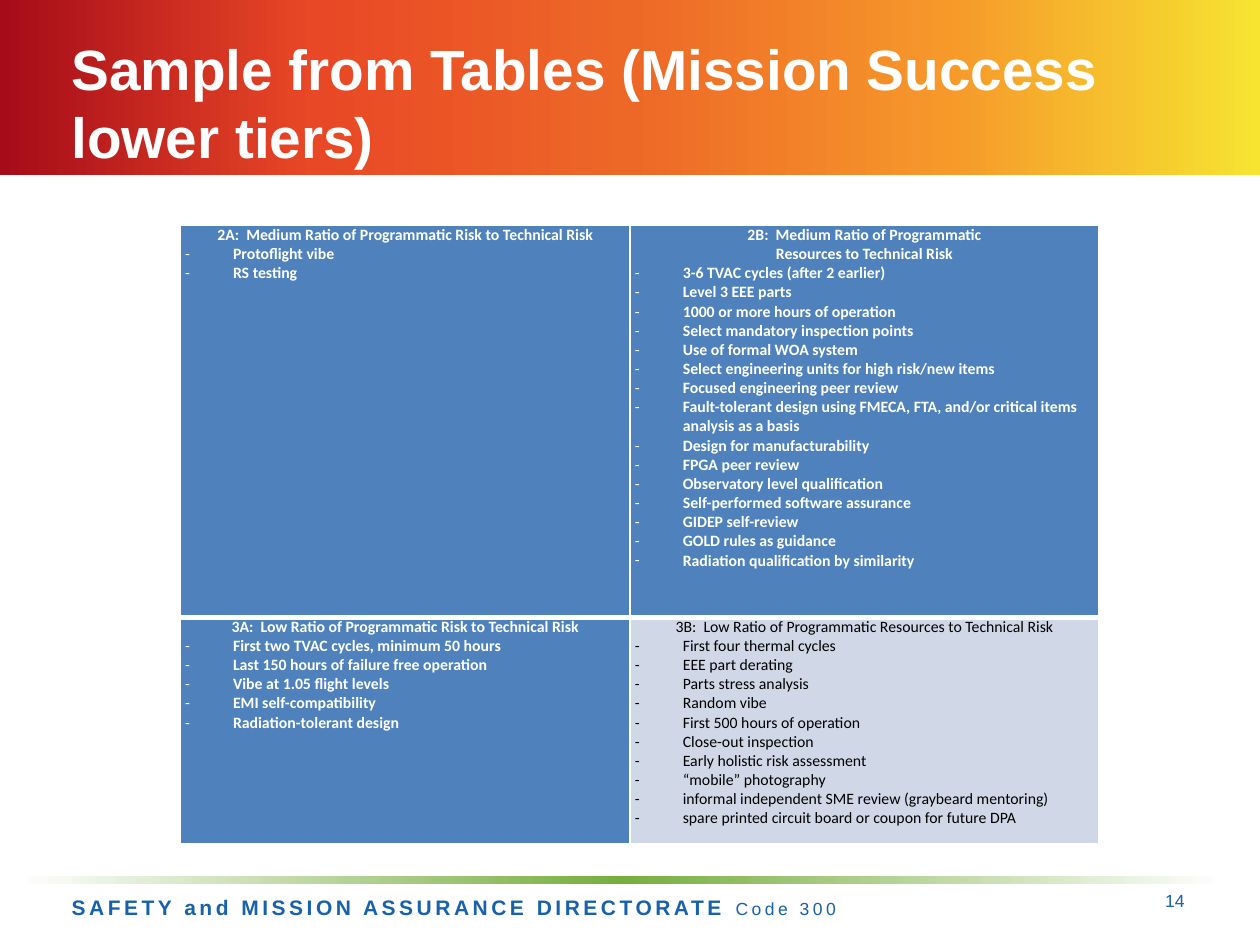
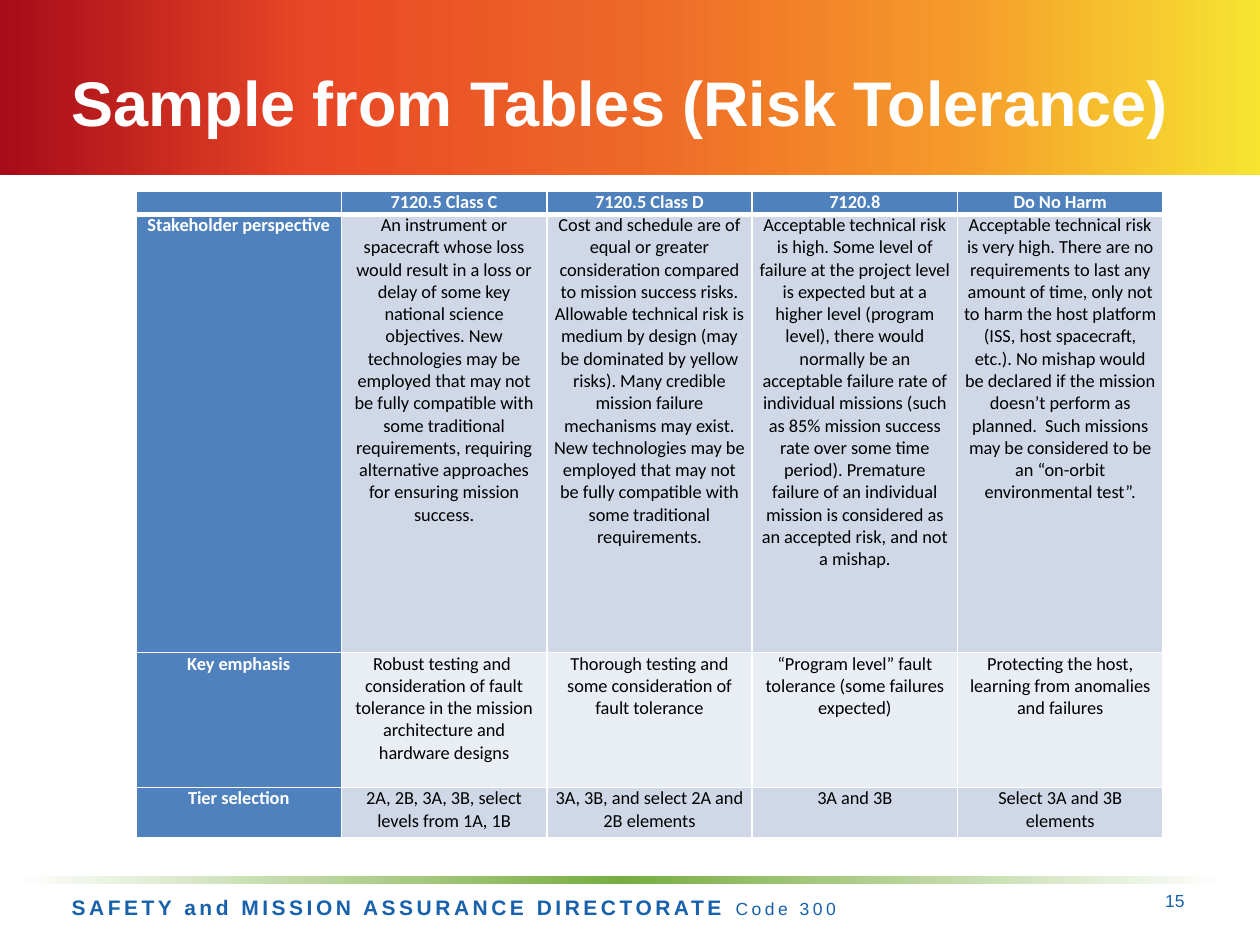
"""Builds two slides of sample risk tables for a safety and mission assurance briefing."""
from lxml.etree import SubElement
from pptx import Presentation
from pptx.dml.color import RGBColor
from pptx.enum.shapes import MSO_SHAPE as Shape
from pptx.enum.text import MSO_ANCHOR as Anchor, PP_ALIGN as Align
from pptx.oxml.ns import qn
from pptx.util import Inches, Pt

WHITE, BLACK, NAVY = "FFFFFF", "000000", "1861AC"
HEADER, BAND_DARK, BAND_LIGHT = "4F81BD", "D0D8E8", "E9EDF4"
BANNER = [(0, "A60B19"), (25, "E94826"), (50, "ED6827"), (75, "F6982A"), (100, "F6E431")]
RULE = [(0, WHITE), (50, "77AD3F"), (100, WHITE)]
DIRECTORATE, CODE = "SAFETY and MISSION ASSURANCE DIRECTORATE ", "Code 300"

TIERS = {
    "title": "Sample from Tables (Mission Success lower tiers)",
    "title_size": 32.4,
    "number": 14,
    "at": (1.43, 1.79),
    "columns": [3.57, 3.72],
    "rows": [3.11, 1.8],
    "cells": [
        [
            (["2A:  Medium Ratio of Programmatic Risk to Technical Risk"],
             ["Protoflight vibe", "RS testing"]),
            (["2B:  Medium Ratio of Programmatic", "Resources to Technical Risk"],
             ["3-6 TVAC cycles (after 2 earlier)",
              "Level 3 EEE parts",
              "1000 or more hours of operation",
              "Select mandatory inspection points",
              "Use of formal WOA system",
              "Select engineering units for high risk/new items",
              "Focused engineering peer review",
              "Fault-tolerant design using FMECA, FTA, and/or critical items analysis as a basis",
              "Design for manufacturability",
              "FPGA peer review",
              "Observatory level qualification",
              "Self-performed software assurance",
              "GIDEP self-review",
              "GOLD rules as guidance",
              "Radiation qualification by similarity"]),
        ],
        [
            (["3A:  Low Ratio of Programmatic Risk to Technical Risk"],
             ["First two TVAC cycles, minimum 50 hours",
              "Last 150 hours of failure free operation",
              "Vibe at 1.05 flight levels",
              "EMI self-compatibility",
              "Radiation-tolerant design"]),
            (["3B:  Low Ratio of Programmatic Resources to Technical Risk"],
             ["First four thermal cycles",
              "EEE part derating",
              "Parts stress analysis",
              "Random vibe",
              "First 500 hours of operation",
              "Close-out inspection",
              "Early holistic risk assessment",
              "“mobile” photography",
              "informal independent SME review (graybeard mentoring)",
              "spare printed circuit board or coupon for future DPA"]),
        ],
    ],
    "size": 9,
    "inset": 0.04,
}

TOLERANCE = {
    "title": "Sample from Tables (Risk Tolerance)",
    "title_size": 36,
    "number": 15,
    "at": (1.08, 1.52),
    "columns": [1.63] * 5,
    "rows": [0.18, 3.48, 1.07, 0.4],
    "cells": [[([text], []) for text in row] for row in [
        ["", "7120.5 Class C", "7120.5 Class D", "7120.8", "Do No Harm"],
        ["Stakeholder perspective",
         "An instrument or spacecraft whose loss would result in a loss or delay of some key "
         "national science objectives. New technologies may be employed that may not be fully "
         "compatible with some traditional requirements, requiring alternative approaches for "
         "ensuring mission success.",
         "Cost and schedule are of equal or greater consideration compared to mission success "
         "risks. Allowable technical risk is medium by design (may be dominated by yellow risks). "
         "Many credible mission failure mechanisms may exist. New technologies may be employed "
         "that may not be fully compatible with some traditional requirements.",
         "Acceptable technical risk is high. Some level of failure at the project level is "
         "expected but at a higher level (program level), there would normally be an acceptable "
         "failure rate of individual missions (such as 85% mission success rate over some time "
         "period). Premature failure of an individual mission is considered as an accepted risk, "
         "and not a mishap.",
         "Acceptable technical risk is very high. There are no requirements to last any amount of "
         "time, only not to harm the host platform (ISS, host spacecraft, etc.). No mishap would "
         "be declared if the mission doesn’t perform as planned.  Such missions may be considered "
         "to be an “on-orbit environmental test”."],
        ["Key emphasis",
         "Robust testing and  consideration of fault tolerance in the mission architecture and "
         "hardware designs",
         "Thorough testing and some consideration of fault tolerance",
         "“Program level” fault tolerance (some failures expected)",
         "Protecting the host, learning from anomalies and failures"],
        ["Tier selection",
         "2A, 2B, 3A, 3B, select levels from 1A, 1B",
         "3A, 3B, and select 2A and 2B elements",
         "3A and 3B",
         "Select 3A and 3B elements"],
    ]],
    "size": 10.5,
    "inset": 0.05,
}


def rgb(code):
    return RGBColor.from_string(code)


def write(paragraph, text, size, color, font="Arial", bold=False, align=Align.LEFT, spacing=0):
    paragraph.alignment = align
    if not text:
        SubElement(paragraph._p, qn("a:endParaRPr"), sz=str(int(size * 100)))
        return
    run = paragraph.add_run()
    run.text = text
    run.font.size, run.font.name, run.font.bold = Pt(size), font, bold
    run.font.color.rgb = rgb(color)
    if spacing:
        run._r.get_or_add_rPr().set("spc", str(spacing * 100))


def add_band(slide, box, stops):
    band = slide.shapes.add_shape(Shape.RECTANGLE, *map(Inches, box))
    band.shadow.inherit = False
    band.line.fill.background()
    band.fill.gradient()
    band.fill.gradient_angle = 0
    stop_list = band._element.spPr.find(".//" + qn("a:gsLst"))
    stop_list.clear()
    for percent, color in stops:
        stop = SubElement(stop_list, qn("a:gs"), pos=str(percent * 1000))
        SubElement(stop, qn("a:srgbClr"), val=color)


def add_line(slide, box, anchor=Anchor.TOP):
    frame = slide.shapes.add_textbox(*map(Inches, box)).text_frame
    frame.word_wrap = True
    frame.vertical_anchor = anchor
    return frame.paragraphs[0]


def dash(paragraph):
    properties = paragraph._p.get_or_add_pPr()
    properties.set("marL", str(Inches(0.38)))
    properties.set("indent", str(-Inches(0.38)))
    SubElement(properties, qn("a:buFont"), typeface="Calibri")
    SubElement(properties, qn("a:buChar"), char="-")


def set_borders(cell, **widths):
    properties = cell._tc.get_or_add_tcPr()
    for side in "LRTB":
        line = SubElement(properties, qn("a:ln" + side), w=str(Pt(widths.get(side, 1))))
        SubElement(SubElement(line, qn("a:solidFill")), qn("a:srgbClr"), val=WHITE)


def fill_cell(cell, content, row, column, size, inset):
    heading, items = content
    is_header = row == 0 or column == 0
    set_borders(cell, B=3 if row == 0 else 1, T=3 if row == 1 else 1)
    cell.fill.solid()
    cell.fill.fore_color.rgb = rgb(HEADER if is_header else BAND_DARK if row % 2 else BAND_LIGHT)
    cell.margin_left = cell.margin_right = Inches(inset)
    cell.margin_top = cell.margin_bottom = 0
    frame = cell.text_frame
    for index, text in enumerate(heading + items):
        paragraph = frame.add_paragraph() if index else frame.paragraphs[0]
        is_item = index >= len(heading)
        write(paragraph, text, size, WHITE if is_header else BLACK, font="Calibri",
              bold=is_header, align=Align.LEFT if is_item else Align.CENTER)
        if is_item:
            dash(paragraph)


def add_grid(slide, content):
    columns, rows = content["columns"], content["rows"]
    box = (*content["at"], sum(columns), sum(rows))
    grid = slide.shapes.add_table(len(rows), len(columns), *map(Inches, box)).table
    grid.first_row = grid.horz_banding = False
    for column, width in zip(grid.columns, columns):
        column.width = Inches(width)
    for row, height in zip(grid.rows, rows):
        row.height = Inches(height)
    for r, line in enumerate(content["cells"]):
        for c, entry in enumerate(line):
            fill_cell(grid.cell(r, c), entry, r, c, content["size"], content["inset"])


def add_slide(deck, content):
    slide = deck.slides.add_slide(deck.slide_layouts[6])
    add_band(slide, (0, 0, 10, 1.39), BANNER)
    footer = add_line(slide, (0.47, 7.05, 8.25, 0.3))
    write(footer, DIRECTORATE, 12, NAVY, bold=True, spacing=2)
    write(footer, CODE, 10, NAVY, spacing=2)
    add_band(slide, (0.12, 6.95, 9.61, 0.07), RULE)
    title = add_line(slide, (0.47, 0.18, 9, 1.25), Anchor.MIDDLE)
    write(title, content["title"], content["title_size"], WHITE, bold=True)
    number = add_line(slide, (7.17, 6.95, 2.33, 0.4), Anchor.MIDDLE)
    write(number, str(content["number"]), 10, NAVY, align=Align.RIGHT)
    add_grid(slide, content)


def main():
    deck = Presentation()
    deck.slide_width, deck.slide_height = Inches(10), Inches(7.5)
    for content in (TIERS, TOLERANCE):
        add_slide(deck, content)
    deck.save("out.pptx")


if __name__ == "__main__":
    main()
